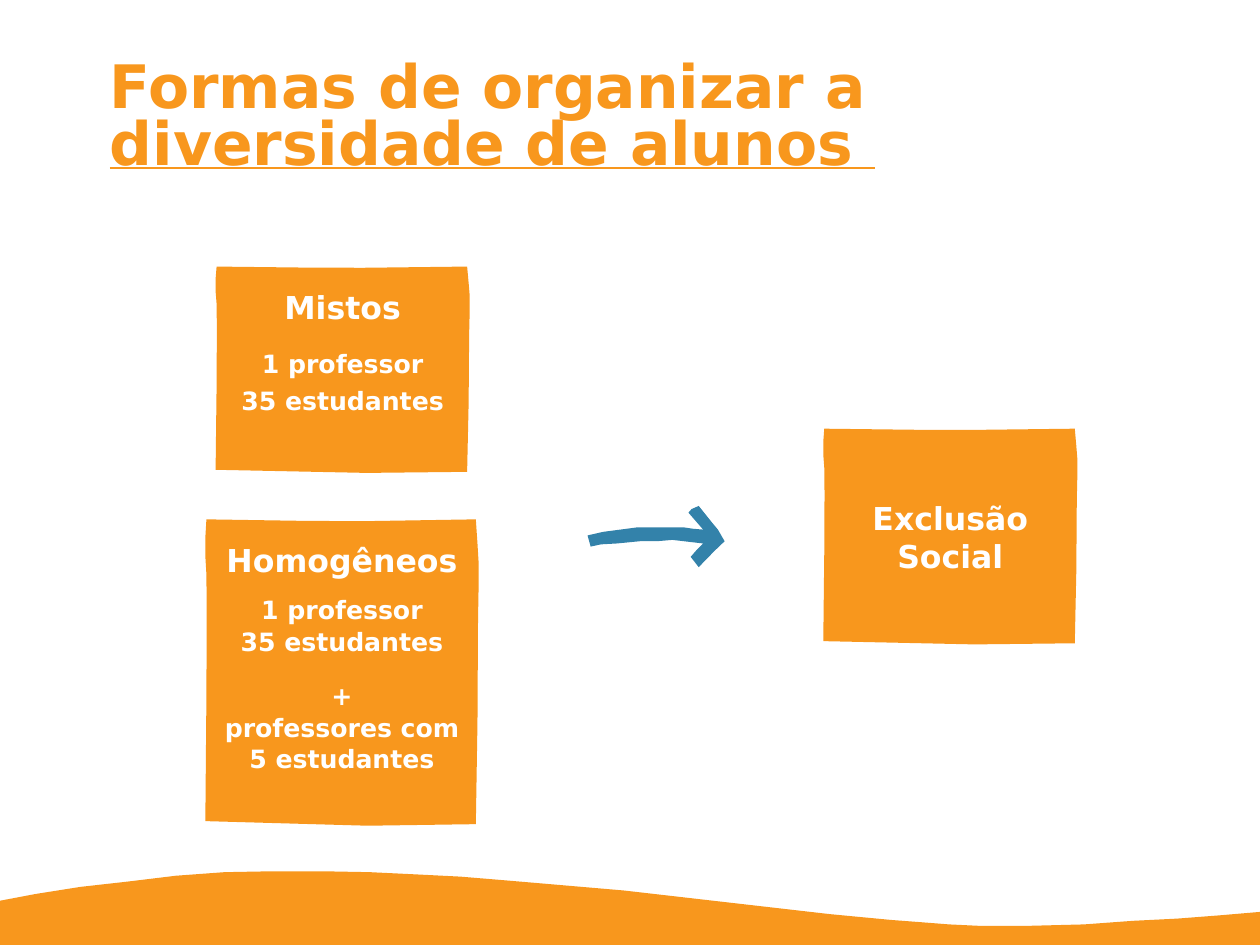
from pptx import Presentation
from pptx.dml.color import RGBColor
from pptx.enum.text import MSO_ANCHOR, PP_ALIGN
from pptx.util import Cm, Pt

ORANGE = "F8971D"
BLUE = "3382AA"
WHITE = "FFFFFF"

WAVE = [
    (0, 2017), (79, 2002), (180, 1986), (287, 1974), (394, 1961), (503, 1953),
    (612, 1951), (721, 1951), (828, 1953), (932, 1958), (1031, 1963),
    (1128, 1971), (1222, 1979), (1397, 1994), (1859, 2047), (1996, 2060),
    (2062, 2065), (2126, 2070), (2189, 2073), (2311, 2073), (2428, 2070),
    (2537, 2062), (2637, 2057), (2728, 2050), (2822, 2042), (2822, 2116),
    (0, 2116),
]
ARROW = [
    (1316, 1199), (1351, 1191), (1389, 1186), (1427, 1181), (1473, 1181),
    (1532, 1181), (1552, 1184), (1575, 1186), (1542, 1148), (1549, 1140),
    (1565, 1133), (1577, 1148), (1593, 1168), (1608, 1186), (1623, 1212),
    (1600, 1234), (1565, 1270), (1547, 1247), (1560, 1232), (1575, 1217),
    (1549, 1214), (1506, 1209), (1471, 1212), (1433, 1212), (1382, 1217),
    (1346, 1219), (1323, 1224),
]
CARD = [
    (4, 0), (0, 60), (0, 120), (4, 180), (5, 300), (4, 580), (0, 985),
    (595, 1000), (990, 995), (996, 660), (998, 330), (1000, 220),
    (1000, 140), (996, 80), (990, 0), (580, 6), (360, 5),
]

CARDS = [
    (4.83, 5.97, 5.69, 4.62, MSO_ANCHOR.TOP, [
        ("Mistos", 20, 0, 1),
        ("1 professor", 16, 14, 1),
        ("35 estudantes", 16, 4.8, 1),
    ]),
    (4.6, 11.63, 6.12, 6.86, MSO_ANCHOR.TOP, [
        ("Homogêneos", 20, 0, 1),
        ("1 professor", 16, 10, 1),
        ("35 estudantes", 16, 0.8, 1),
        ("+", 16, 15.5, 1),
        ("professores com 5 estudantes", 16, 0, 1.04),
    ]),
    (18.44, 9.6, 5.69, 4.83, MSO_ANCHOR.MIDDLE, [
        ("Exclusão Social", 20, 0, 1),
    ]),
]


def add_outline(points, color, scale=Cm(0.01), left=0, top=0):
    builder = slide.shapes.build_freeform(*points[0], scale=scale)
    builder.add_line_segments(points[1:], close=True)
    shape = builder.convert_to_shape(left, top)
    shape.shadow.inherit = False
    shape.fill.solid()
    shape.fill.fore_color.rgb = RGBColor.from_string(color)
    shape.line.fill.background()
    return shape


def format_font(font, size, color):
    font.name = "DejaVu Sans"
    font.size = Pt(size)
    font.bold = True
    font.color.rgb = RGBColor.from_string(color)


presentation = Presentation()
presentation.slide_width = Cm(28.22)
presentation.slide_height = Cm(21.16)
slide = presentation.slides.add_slide(presentation.slide_layouts[6])

add_outline(WAVE, ORANGE)
add_outline(ARROW, BLUE)

title = slide.shapes.add_textbox(Cm(2.46), Cm(1.42), Cm(23.34), Cm(2.54))
title_frame = title.text_frame
title_frame.word_wrap = True
title_frame.margin_left = title_frame.margin_right = 0
title_frame.margin_top = title_frame.margin_bottom = 0
paragraph = title_frame.paragraphs[0]
paragraph.line_spacing = 0.79
for text, underlined in [("Formas de organizar a ", False), ("diversidade de alunos ", True)]:
    run = paragraph.add_run()
    run.text = text
    format_font(run.font, 38, ORANGE)
    run.font.underline = underlined

for left, top, width, height, anchor, lines in CARDS:
    scale = (Cm(width) / 1000, Cm(height) / 1000)
    card = add_outline(CARD, ORANGE, scale, Cm(left), Cm(top))
    text_frame = card.text_frame
    text_frame.word_wrap = True
    text_frame.vertical_anchor = anchor
    text_frame.margin_left = text_frame.margin_right = Cm(0.4)
    text_frame.margin_top = text_frame.margin_bottom = Cm(0.48)
    text_frame.text = "\n".join(line[0] for line in lines)
    for paragraph, (text, size, space_before, line_spacing) in zip(text_frame.paragraphs, lines):
        paragraph.alignment = PP_ALIGN.CENTER
        paragraph.space_before = Pt(space_before)
        paragraph.line_spacing = line_spacing
        format_font(paragraph.runs[0].font, size, WHITE)

presentation.save("out.pptx")
